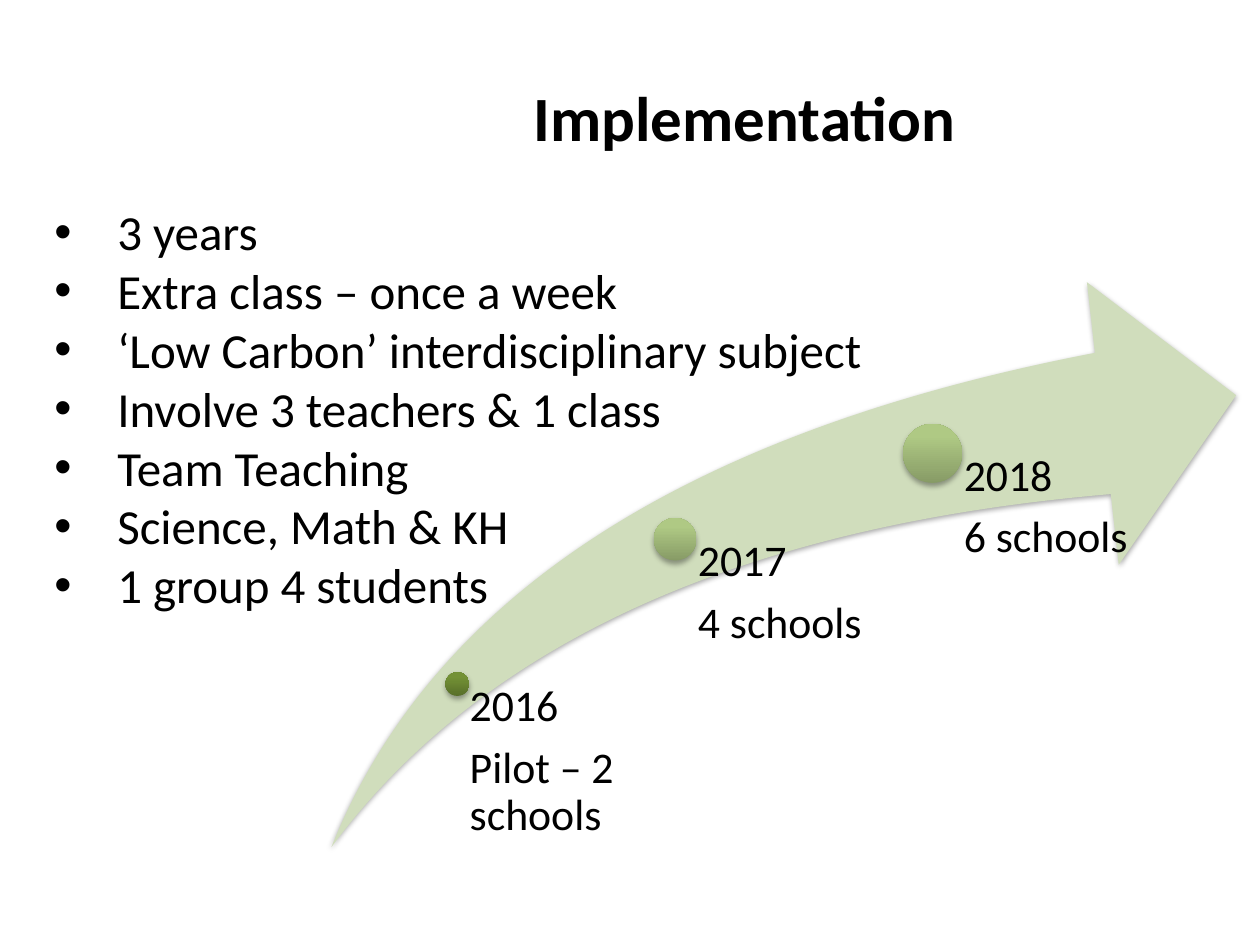
from lxml import etree
from pptx import Presentation
from pptx import util as u
from pptx.dml.color import RGBColor
from pptx.enum import shapes, text
from pptx.oxml import ns

BLACK = RGBColor(0x00, 0x00, 0x00)
PALE_GREEN = RGBColor(0xD0, 0xDD, 0xBC)
DARK_DOT = (RGBColor(0x58, 0x6F, 0x29), RGBColor(0x73, 0x91, 0x35))
LIGHT_DOT = (RGBColor(0x87, 0x9B, 0x66), RGBColor(0xAF, 0xC9, 0x84))
FONT = "Calibri"

POINTS = [
    "3 years",
    "Extra class – once a week",
    "‘Low Carbon’ interdisciplinary subject",
    "Involve 3 teachers & 1 class",
    "Team Teaching",
    "Science, Math & KH",
    "1 group 4 students",
]

# Dot centre x and y, dot diameter, label width, label inset (cm), colours, lines
MILESTONES = [
    (9.22, 13.79, 0.48, 4.24, 0.25, DARK_DOT, ["2016", "Pilot – 2 schools"]),
    (13.61, 10.87, 0.86, 4.37, 0.46, LIGHT_DOT, ["2017", "4 schools"]),
    (18.8, 9.14, 1.19, 4.37, 0.63, LIGHT_DOT, ["2018", "6 schools"]),
]
ARROW_BOTTOM = 17.08


def place(item, left, top, width, height):
    item.left, item.top = u.Cm(left), u.Cm(top)
    item.width, item.height = u.Cm(width), u.Cm(height)


def write(frame, lines, *, size, bold=False, align=None, hanging=None,
          line_spacing=None, after=0):
    """Fill a text frame with one paragraph per line."""
    frame.auto_size = text.MSO_AUTO_SIZE.NONE
    for index, line in enumerate(lines):
        para = frame.paragraphs[0] if index == 0 else frame.add_paragraph()
        if hanging:
            properties = para._p.get_or_add_pPr()
            properties.set("marL", str(u.Cm(hanging)))
            properties.set("indent", str(-u.Cm(hanging)))
        para.alignment = align
        para.space_before = u.Pt(0)
        para.space_after = u.Pt(after)
        para.line_spacing = line_spacing
        span = para.add_run()
        span.text = line
        span.font.name, span.font.size = FONT, u.Pt(size)
        span.font.bold, span.font.color.rgb = bold, BLACK


def add_soft_shadow(shape):
    shape.shadow.inherit = False
    effects = shape._element.spPr.find(ns.qn("a:effectLst"))
    shadow = etree.SubElement(
        effects, ns.qn("a:outerShdw"), blurRad=str(u.Pt(3.1)),
        dist=str(u.Pt(1.8)), dir="5400000", rotWithShape="0")
    colour = etree.SubElement(shadow, ns.qn("a:srgbClr"), val=str(BLACK))
    etree.SubElement(colour, ns.qn("a:alpha"), val="35000")


def add_figure(slide, kind, left, top, width, height):
    """Add an outline-free preset shape with a soft shadow."""
    shape = slide.shapes.add_shape(
        kind, u.Cm(left), u.Cm(top), u.Cm(width), u.Cm(height))
    shape.line.fill.background()
    add_soft_shadow(shape)
    return shape


def add_arrow(slide):
    arrow = add_figure(slide, shapes.MSO_SHAPE.SWOOSH_ARROW,
                       6.68, 5.69, 18.24, 11.39)
    arrow.adjustments[0] = arrow.adjustments[1] = 0.25
    arrow.fill.solid()
    arrow.fill.fore_color.rgb = PALE_GREEN


def add_milestone(slide, x, y, diameter, width, inset, colours, lines):
    dot = add_figure(slide, shapes.MSO_SHAPE.OVAL, x - diameter / 2,
                     y - diameter / 2, diameter, diameter)
    dot.fill.gradient()
    dot.fill.gradient_angle = 90
    for stop, colour, position in zip(dot.fill.gradient_stops, colours, (0, 0.8)):
        stop.color.rgb, stop.position = colour, position

    # The label starts at the dot's centre and ends with the arrow
    box = slide.shapes.add_textbox(
        u.Cm(x), u.Cm(y), u.Cm(width), u.Cm(ARROW_BOTTOM - y))
    frame = box.text_frame
    frame.word_wrap = True
    frame.margin_left = u.Cm(inset)
    frame.margin_top = frame.margin_right = frame.margin_bottom = 0
    write(frame, lines, size=25, line_spacing=0.9, after=8)


def main():
    deck = Presentation()
    deck.slide_width, deck.slide_height = u.Cm(25.4), u.Cm(19.05)
    slide = deck.slides.add_slide(deck.slide_layouts[1])

    # Title
    title = slide.shapes.title
    place(title, 5.89, 0.76, 18.24, 3.18)
    title.text_frame.vertical_anchor = text.MSO_ANCHOR.MIDDLE
    write(title.text_frame, ["Implementation"], size=36, bold=True,
          align=text.PP_ALIGN.CENTER)

    # Rising timeline
    add_arrow(slide)
    for milestone in MILESTONES:
        add_milestone(slide, *milestone)

    # Bullet list
    body = slide.placeholders[1]
    place(body, 0.84, 3.94, 16.97, 8.64)
    write(body.text_frame, POINTS, size=28, hanging=1.27)

    deck.save("out.pptx")


if __name__ == "__main__":
    main()
